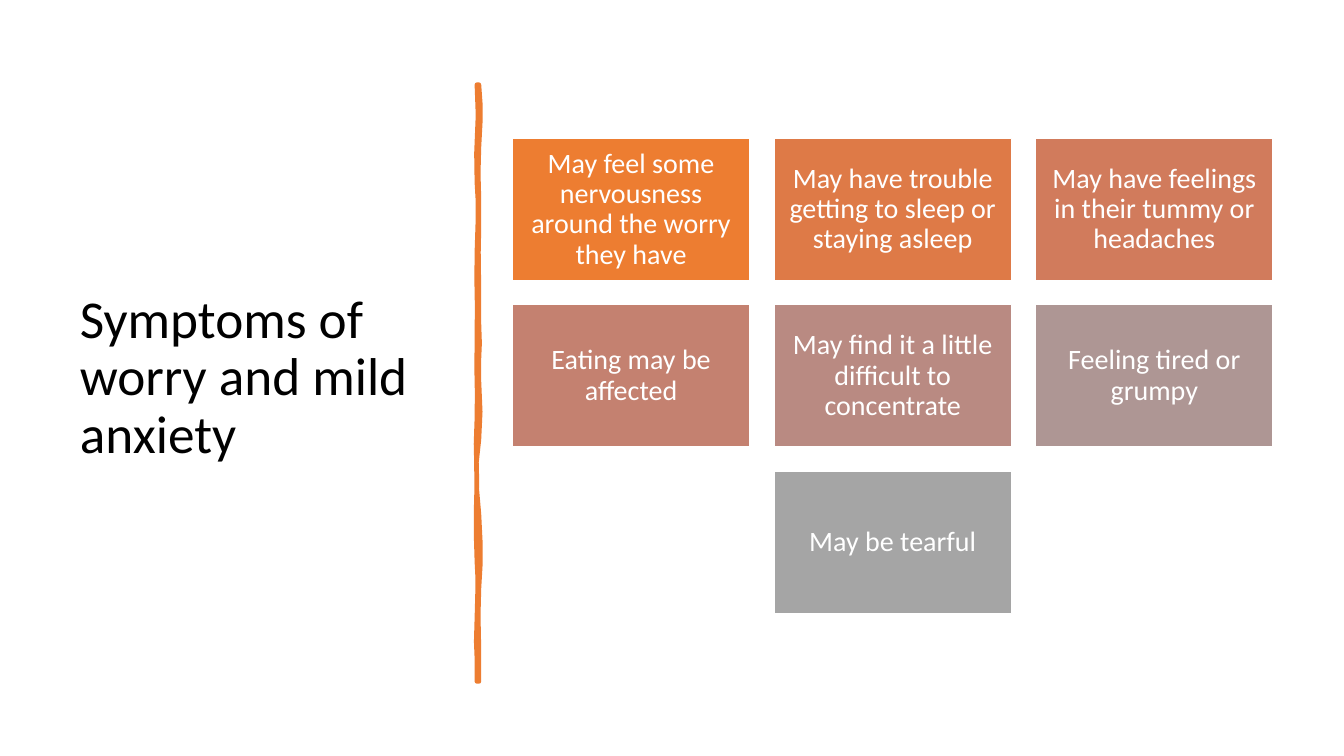
from dataclasses import dataclass
from typing import Iterator

from lxml.etree import SubElement
from pptx import Presentation
from pptx.dml.color import RGBColor
from pptx.enum.shapes import MSO_SHAPE as Shape
from pptx.enum.text import MSO_ANCHOR as Anchor, PP_ALIGN as Align
from pptx.oxml.ns import qn
from pptx.util import Inches, Pt

Point = tuple[float, float]

SLIDE_WIDTH, SLIDE_HEIGHT = Inches(13.33), Inches(7.5)
GRID_COLUMNS, GRID_ROWS = 1333, 750
FONT = "Calibri"
ORANGE, WHITE, BLACK = "ED7D31", "FFFFFF", "000000"
CURVE_STEPS = 3


@dataclass(frozen=True)
class Area:
    left: float
    top: float
    width: float
    height: float

    def emu(self) -> tuple[int, int, int, int]:
        return (column(self.left), row(self.top),
                column(self.width), row(self.height))


@dataclass(frozen=True)
class Symptom:
    text: str
    fill: str
    column: int
    row: int

    def area(self) -> Area:
        return Area(508 + self.column * 259.5, 137.3 + self.row * 165, 235.8, 141.4)


TITLE = "Symptoms of worry and mild anxiety"
TITLE_AREA = Area(69.4, 70, 374, 611)
TITLE_SIDE_MARGIN = -45

SYMPTOMS = [
    Symptom("May feel some nervousness around the worry they have", ORANGE, 0, 0),
    Symptom("May have trouble getting to sleep or staying asleep", "DE7A47", 1, 0),
    Symptom("May have feelings in their tummy or headaches", "D17B5C", 2, 0),
    Symptom("Eating may be affected", "C48170", 0, 1),
    Symptom("May find it a little difficult to concentrate", "B98A82", 1, 1),
    Symptom("Feeling tired or grumpy", "AE9694", 2, 1),
    Symptom("May be tearful", "A5A5A5", 1, 2),
]

DIVIDER_START = (475, 84)
DIVIDER_CURVES = [
    ((477, 102), (477, 119), (475, 146)),
    ((473, 173), (476, 195), (475, 226)),
    ((474, 257), (475, 262), (475, 294)),
    ((474, 325), (477, 342), (475, 356)),
    ((473, 370), (479, 414), (475, 436)),
    ((471, 457), (472, 484), (475, 510)),
    ((477, 536), (477, 564), (475, 584)),
    ((473, 603), (476, 650), (475, 676)),
    ((474, 676), (473, 676), (473, 676)),
    ((474, 646), (471, 644), (473, 613)),
    ((474, 583), (474, 570), (473, 557)),
    ((472, 544), (472, 495), (473, 477)),
    ((473, 459), (471, 445), (473, 415)),
    ((474, 386), (472, 373), (473, 335)),
    ((474, 298), (472, 281), (473, 250)),
    ((474, 218), (475, 200), (473, 181)),
    ((470, 163), (477, 104), (473, 84)),
]


def column(count: float) -> int:
    return round(SLIDE_WIDTH * count / GRID_COLUMNS)


def row(count: float) -> int:
    return round(SLIDE_HEIGHT * count / GRID_ROWS)


def color(value: str) -> RGBColor:
    return RGBColor.from_string(value)


def paint(shape, fill: str, line: str, width: float) -> None:
    shape.shadow.inherit = False
    shape.fill.solid()
    shape.fill.fore_color.rgb = color(fill)
    shape.line.color.rgb = color(line)
    shape.line.width = Pt(width)


def write(shape, text: str, size: float, ink: str, align: Align,
          side_margin: float) -> None:
    frame = shape.text_frame
    frame.text = text
    frame.word_wrap = True
    frame.vertical_anchor = Anchor.MIDDLE
    frame.margin_left = frame.margin_right = column(side_margin)
    frame.margin_top = frame.margin_bottom = row(8)
    para = frame.paragraphs[0]
    para.alignment = align
    para.line_spacing = 0.9
    for span in para.runs:
        span.font.name = FONT
        span.font.size = Pt(size)
        span.font.color.rgb = color(ink)


def divider_points() -> Iterator[Point]:
    start = DIVIDER_START
    for first, second, end in DIVIDER_CURVES:
        for step in range(1, CURVE_STEPS + 1):
            t = step / CURVE_STEPS
            x, y = ((1 - t) ** 3 * a + 3 * (1 - t) ** 2 * t * b
                    + 3 * (1 - t) * t ** 2 * c + t ** 3 * d
                    for a, b, c, d in zip(start, first, second, end))
            yield column(x), row(y)
        start = end


def draw_title(page) -> None:
    title = page.shapes.add_shape(Shape.OVAL, *TITLE_AREA.emu())
    title.shadow.inherit = False
    title.fill.background()
    title.line.fill.background()
    write(title, TITLE, 38, BLACK, Align.LEFT, TITLE_SIDE_MARGIN)


def draw_divider(page) -> None:
    x, y = DIVIDER_START
    builder = page.shapes.build_freeform(column(x), row(y))
    builder.add_line_segments(list(divider_points()), close=True)
    divider = builder.convert_to_shape()
    paint(divider, ORANGE, ORANGE, 3.25)
    SubElement(divider.element.spPr.find(qn("a:ln")), qn("a:round"))


def draw_symptom(page, symptom: Symptom) -> None:
    card = page.shapes.add_shape(Shape.RECTANGLE, *symptom.area().emu())
    paint(card, symptom.fill, WHITE, 1)
    write(card, symptom.text, 20, WHITE, Align.CENTER, 8)


def main() -> None:
    deck = Presentation()
    deck.slide_width, deck.slide_height = SLIDE_WIDTH, SLIDE_HEIGHT
    page = deck.slides.add_slide(deck.slide_layouts[6])
    draw_title(page)
    draw_divider(page)
    for symptom in SYMPTOMS:
        draw_symptom(page, symptom)
    deck.save("out.pptx")


if __name__ == "__main__":
    main()
